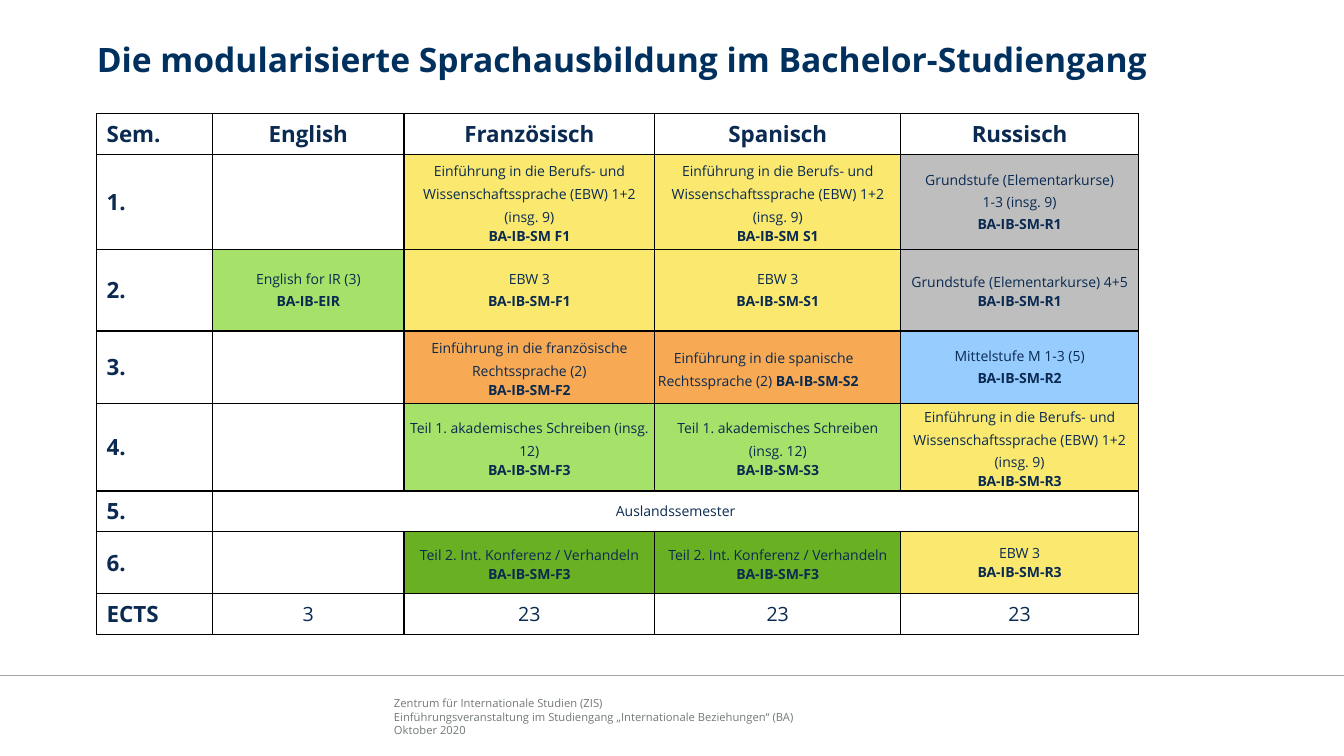
from collections import namedtuple
from dataclasses import dataclass

from lxml.etree import SubElement
from pptx import Presentation
from pptx.dml.color import RGBColor
from pptx.enum.shapes import MSO_CONNECTOR
from pptx.enum.text import MSO_ANCHOR as Anchor, MSO_AUTO_SIZE as AutoSize, PP_ALIGN as Align
from pptx.oxml.ns import qn
from pptx.util import Cm, Pt


@dataclass(frozen=True)
class Theme:
    font: str = "Open Sans"
    title: str = "00305E"
    ink: str = "0A2A51"
    footer: str = "727879"
    rule: str = "A6A6A6"
    border: str = "000000"
    yellow: str = "FAE96E"
    grey: str = "BEBEBE"
    lime: str = "A6E169"
    green: str = "6AB023"
    orange: str = "F7A953"
    blue: str = "97CCFF"
    title_size: int = 24
    head_size: int = 16
    total_size: int = 14
    module_size: int = 10
    footer_size: int = 8


T = Theme()

# A module's last line is its code; wrapped courses have wider lines,
# and inline ones keep the code in the same paragraph.
Module = namedtuple("Module", "fill lines style", defaults=("plain",))

EBW12 = "Einführung in die Berufs- und Wissenschaftssprache (EBW) 1+2 (insg. 9)"
WRITING = "Teil 1. akademisches Schreiben (insg. 12)"
DEBATE = "Teil 2. Int. Konferenz / Verhandeln"

HEADER = ["Sem.", "English", "Französisch", "Spanisch", "Russisch"]
TOTALS = ["ECTS", "3", "23", "23", "23"]
SEMESTERS = [
    ("1.", None,
     Module(T.yellow, [EBW12, "BA-IB-SM F1"], "wrapped"),
     Module(T.yellow, [EBW12, "BA-IB-SM S1"], "wrapped"),
     Module(T.grey, ["Grundstufe (Elementarkurse)", "1-3 (insg. 9)", "BA-IB-SM-R1"])),
    ("2.",
     Module(T.lime, ["English for IR (3)", "BA-IB-EIR"]),
     Module(T.yellow, ["EBW 3", "BA-IB-SM-F1"]),
     Module(T.yellow, ["EBW 3", "BA-IB-SM-S1"]),
     Module(T.grey, ["Grundstufe (Elementarkurse) 4+5", "BA-IB-SM-R1"], "wrapped")),
    ("3.", None,
     Module(T.orange, ["Einführung in die französische Rechtssprache (2)", "BA-IB-SM-F2"], "wrapped"),
     Module(T.orange, ["Einführung in die spanische Rechtssprache (2) ", "BA-IB-SM-S2"], "inline"),
     Module(T.blue, ["Mittelstufe M 1-3 (5)", "BA-IB-SM-R2"])),
    ("4.", None,
     Module(T.lime, [WRITING, "BA-IB-SM-F3"], "wrapped"),
     Module(T.lime, [WRITING, "BA-IB-SM-S3"], "wrapped"),
     Module(T.yellow, [EBW12, "BA-IB-SM-R3"], "wrapped")),
    ("5.", "Auslandssemester", None, None, None),
    ("6.", None,
     Module(T.green, [DEBATE, "BA-IB-SM-F3"], "wrapped"),
     Module(T.green, [DEBATE, "BA-IB-SM-F3"], "wrapped"),
     Module(T.yellow, ["EBW 3", "BA-IB-SM-R3"], "compact")),
]
COL_WIDTHS = [2.92, 4.82, 6.32, 6.2, 5.99]
COL_INDENTS = [0.25, 0.25, 0.13, 0.13, 0.25]
ROW_HEIGHTS = [1.02, 2.39, 2.06, 1.83, 2.13, 1.02, 1.57, 1.02]


def add_run(p, text, size, color=T.ink, bold=False):
    r = p.add_run()
    r.text = text
    r.font.name, r.font.size, r.font.bold = T.font, Pt(size), bold
    r.font.color.rgb = RGBColor.from_string(color)


def write(tf, text, *, size, color=T.ink, bold=False, align=Align.LEFT,
          before=0, spacing=None, indent=0, first=0):
    """Fill the first paragraph of a frame, or add one after it."""
    p = tf.paragraphs[0] if not tf.text else tf.add_paragraph()
    p.alignment, p.space_before, p.line_spacing = align, Pt(before), spacing
    pPr = p._p.get_or_add_pPr()
    pPr.set("marL", str(Cm(indent)))
    pPr.set("marR", str(Cm(indent)))
    pPr.set("indent", str(Cm(first)))
    for i, line in enumerate(text.split("\n")):
        if i:
            p.add_line_break()
        add_run(p, line, size, color, bold)
    return p


class SlideBuilder:
    def __init__(self, prs, theme):
        self.theme = theme
        self.s = prs.slides.add_slide(prs.slide_layouts[5])

    def reset(self, tf, anchor):
        tf.margin_left = tf.margin_right = tf.margin_top = tf.margin_bottom = 0
        tf.word_wrap, tf.auto_size, tf.vertical_anchor = True, AutoSize.NONE, anchor

    def title(self, text, x, y, w, h):
        sp = self.s.shapes.title
        sp.left, sp.top, sp.width, sp.height = Cm(x), Cm(y), Cm(w), Cm(h)
        self.reset(sp.text_frame, Anchor.TOP)
        write(sp.text_frame, text, size=self.theme.title_size,
              color=self.theme.title, bold=True)

    def footer(self, lines, x, y, w, h):
        tf = self.s.shapes.add_textbox(Cm(x), Cm(y), Cm(w), Cm(h)).text_frame
        self.reset(tf, Anchor.BOTTOM)
        for line in lines:
            write(tf, line, size=self.theme.footer_size, color=self.theme.footer)

    def rule(self, y, w):
        line = self.s.shapes.add_connector(MSO_CONNECTOR.STRAIGHT, 0, Cm(y), Cm(w), Cm(y))
        line.line.color.rgb = RGBColor.from_string(self.theme.rule)
        line.line.width = Pt(1)
        SubElement(line._element.spPr, qn("a:effectLst"))

    def table(self, x, y, widths, heights):
        frame = self.s.shapes.add_table(len(heights), len(widths), Cm(x), Cm(y),
                                        Cm(sum(widths)), Cm(sum(heights)))
        table = frame.table
        table.first_row = table.horz_banding = False
        for col, w in zip(table.columns, widths):
            col.width = Cm(w)
        for row, h in zip(table.rows, heights):
            row.height = Cm(h)
        for cell in table.iter_cells():
            self.frame_cell(cell)
        return table

    def frame_cell(self, cell):
        cell.margin_left = cell.margin_right = cell.margin_top = cell.margin_bottom = 0
        cell.vertical_anchor = Anchor.MIDDLE
        tcPr = cell._tc.get_or_add_tcPr()
        for side in ("lnL", "lnR", "lnT", "lnB"):
            ln = SubElement(tcPr, qn(f"a:{side}"), w=str(Pt(1)))
            fill = SubElement(ln, qn("a:solidFill"))
            SubElement(fill, qn("a:srgbClr"), val=self.theme.border)
        cell.fill.background()

    def module(self, cell, module, indent):
        cell.fill.solid()
        cell.fill.fore_color.rgb = RGBColor.from_string(module.fill)
        tf, size = cell.text_frame, self.theme.module_size
        *course, code = module.lines
        if module.style == "inline":
            p = write(tf, course[0], size=size, spacing=1.2, before=0.9,
                      indent=0.08, first=0.4)
            add_run(p, code, size, bold=True)
            return
        wrapped = module.style == "wrapped"
        for i, line in enumerate(course):
            write(tf, line, size=size, align=Align.CENTER, indent=indent,
                  before=2.3 if i else 0.9, spacing=1.2 if wrapped else None)
        write(tf, code, size=size, bold=True, align=Align.CENTER, indent=indent,
              before=0 if wrapped else 2.3,
              spacing=Pt(11.4) if module.style == "compact" else None)


def main():
    prs = Presentation()
    prs.slide_width, prs.slide_height = Cm(33.87), Cm(19.05)
    b = SlideBuilder(prs, T)

    # Footer and rule
    b.footer(["Zentrum für Internationale Studien (ZIS)",
              "Einführungsveranstaltung im Studiengang „Internationale Beziehungen“ (BA)\n"
              "Oktober 2020"], 9.93, 17.55, 14.4, 1.02)
    b.rule(17.02, 33.87)

    # Title
    b.title("Die modularisierte Sprachausbildung im Bachelor-Studiengang", 2.44, 0.97, 29.39, 1.9)

    # Course plan
    table = b.table(2.44, 2.87, COL_WIDTHS, ROW_HEIGHTS)
    abroad = 5
    table.cell(abroad, 1).merge(table.cell(abroad, len(HEADER) - 1))
    for r, row in enumerate([HEADER, *SEMESTERS, TOTALS]):
        for c, (item, indent) in enumerate(zip(row, COL_INDENTS)):
            cell = table.cell(r, c)
            if isinstance(item, Module):
                b.module(cell, item, indent)
            elif item:
                label = c == 0 or row is HEADER
                size = T.head_size if label else T.module_size if r == abroad else T.total_size
                write(cell.text_frame, item, size=size, bold=label, indent=indent,
                      align=Align.CENTER if c else Align.LEFT,
                      before=2.5 if row in (HEADER, TOTALS) or r == abroad else 0)

    prs.save("out.pptx")


if __name__ == "__main__":
    main()
